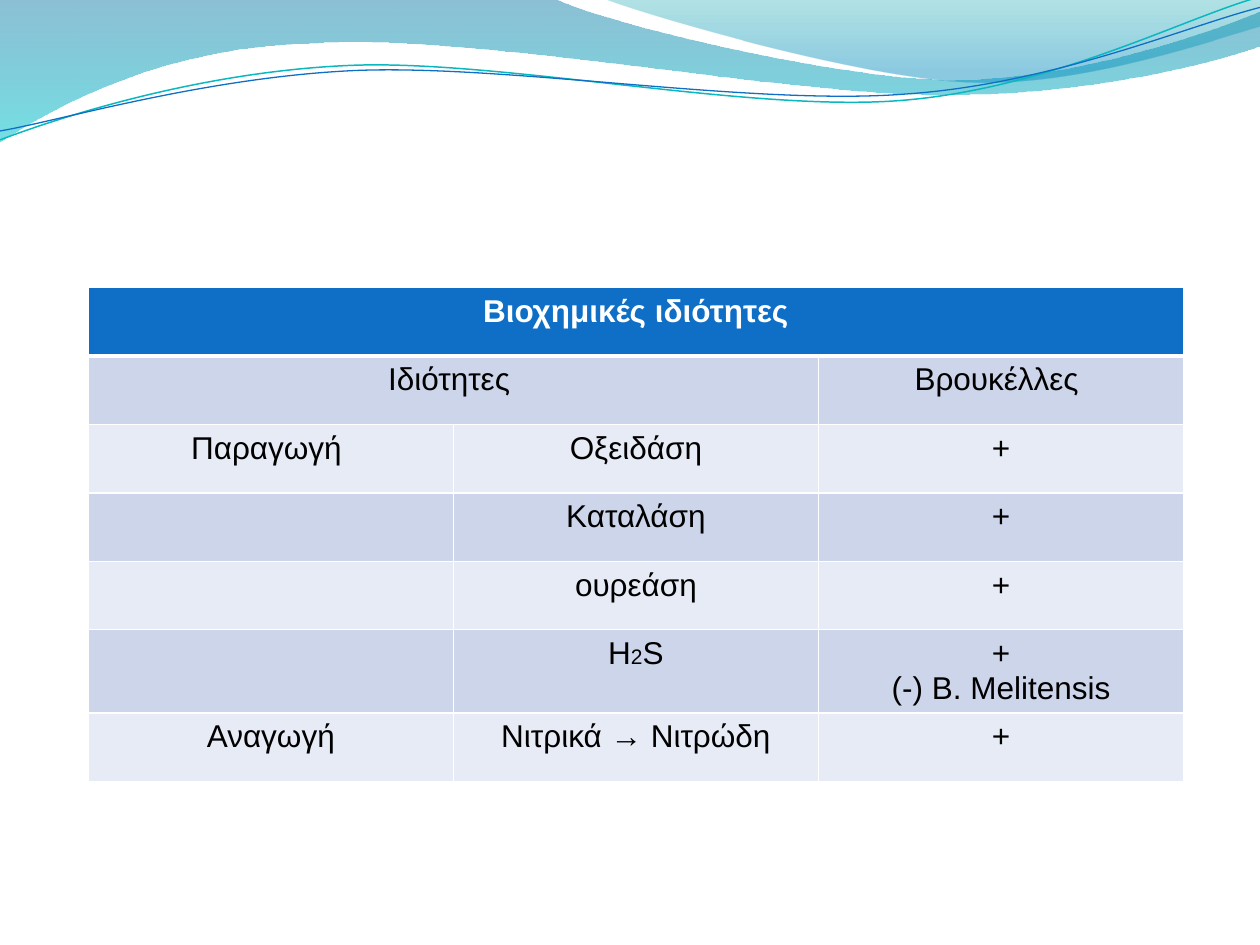
from dataclasses import dataclass
from math import cos, radians, sin

from lxml import etree
from pptx import Presentation
from pptx.dml.color import RGBColor
from pptx.enum.text import PP_ALIGN
from pptx.oxml.ns import qn
from pptx.util import Cm, Pt

CENTER = PP_ALIGN.CENTER
BLANK_LAYOUT = 6
RIBBON_TILT = 357.3
RIBBON_CENTER = (12.68, 1.48)


@dataclass(frozen=True)
class Theme:
    font: str = "Arial"
    body_size: float = 18
    subscript_size: float = 12
    header: str = "0F6FC6"
    bands: tuple = ("E7EBF5", "CCD5EA")
    light: str = "FFFFFF"
    dark: str = "000000"
    wave: tuple = ((0, "0074A1", 45), (1, "00C6CF", 55))
    crest: tuple = ((0, "00A1A9", 30), (0.8, "008BBF", 45))
    teal_ribbon: str = "0AB8BF"
    blue_ribbon: str = "0F6FC6"


WAVE = [
    [(0, 0)], [(11.18, -0.03)],
    [(12.09, 0.43), (16.87, 1.6), (19.25, 1.6)],
    [(21.67, 1.6), (24.33, 0.66), (25.4, 0.23)],
    [(25.43, 0.91)],
    [(24.97, 1.12), (22.1, 1.93), (18.95, 1.91)],
    [(15.8, 1.91), (9.7, 0.71), (6.53, 0.86)],
    [(3.28, 0.91), (1.17, 2.11), (-0.03, 2.87)],
    [(0, 0)],
]
CREST = [
    [(12.17, -0.03)],
    [(12.93, 0.28), (17.32, 1.57), (19.53, 1.65)],
    [(21.74, 1.75), (24.41, 0.81), (25.4, 0.53)],
    [(25.4, 0)], [(12.17, -0.03)],
]
TEAL_RIBBON = [
    [(0, 2.82)],
    [(1.22, 2.36), (4.01, 1.45), (7.04, 1.32)],
    [(10.03, 1.19), (15.06, 2.26), (18.11, 2.03)],
    [(21.16, 1.8), (23.83, 0.38), (25.35, -0.05)],
]
BLUE_RIBBON = [
    [(0, 2.64)],
    [(1.19, 2.44), (4.17, 1.55), (7.19, 1.42)],
    [(10.24, 1.3), (15.16, 2.13), (18.21, 1.9)],
    [(21.23, 1.7), (23.9, 0.53), (25.4, 0.15)],
]

PROPERTIES = [
    ["Βιοχημικές ιδιότητες", "", ""],
    ["Ιδιότητες ", "", "Βρουκέλλες "],
    ["Παραγωγή ", "Οξειδάση", "+"],
    ["", "Καταλάση", "+"],
    ["", "ουρεάση", "+"],
    ["", "Η|2|S", "+\n(-) B. Melitensis"],
    ["Αναγωγή", "Νιτρικά → Νιτρώδη", "+"],
]
MERGES = [(0, 0, 2), (1, 0, 1)]


def level(segments, tilt, center):
    angle = radians(-tilt)
    cx, cy = center
    return [[(cx + (x - cx) * cos(angle) - (y - cy) * sin(angle),
              cy + (x - cx) * sin(angle) + (y - cy) * cos(angle)) for x, y in segment]
            for segment in segments]


class SlideBuilder:
    def __init__(self, slide, theme):
        self.slide = slide
        self.theme = theme

    def outline(self, segments, close):
        start, *rest = [(Cm(x), Cm(y)) for segment in segments for x, y in segment]
        builder = self.slide.shapes.build_freeform(*start)
        builder.add_line_segments(rest, close=close)
        shape = builder.convert_to_shape()
        shape.shadow.inherit = False
        self.bend(shape, segments[1:])
        return shape

    def bend(self, shape, segments):
        lines = iter(list(shape._element.iter(qn("a:lnTo"))))
        for segment in segments:
            first, *others = [next(lines) for point in segment]
            if others:
                first.tag = qn("a:cubicBezTo")
            for line in others:
                first.append(line[0])
                line.getparent().remove(line)

    def wave(self, segments, stops):
        shape = self.outline(segments, True)
        shape.line.fill.background()
        shape.fill.gradient()
        shape.fill.gradient_angle = 270
        for stop, (position, color, opacity) in zip(shape.fill.gradient_stops, stops):
            stop.position = position
            stop.color.rgb = RGBColor.from_string(color)
        colors = shape._element.spPr.iter(qn("a:srgbClr"))
        for element, (position, color, opacity) in zip(colors, stops):
            etree.SubElement(element, qn("a:alpha"), val=str(opacity * 1000))

    def ribbon(self, segments, color, width):
        shape = self.outline(level(segments, RIBBON_TILT, RIBBON_CENTER), False)
        shape.rotation = RIBBON_TILT
        shape.fill.background()
        shape.line.color.rgb = RGBColor.from_string(color)
        shape.line.width = Pt(width)

    def borders(self, cell, widths):
        properties = cell._tc.get_or_add_tcPr()
        for side, width in zip("LRTB", widths):
            line = etree.SubElement(properties, qn(f"a:ln{side}"), w=str(Pt(width)))
            fill = etree.SubElement(line, qn("a:solidFill"))
            etree.SubElement(fill, qn("a:srgbClr"), val=self.theme.light)

    def cell_text(self, cell, text, color, bold):
        frame = cell.text_frame
        for index, line in enumerate(text.split("\n")):
            paragraph = frame.add_paragraph() if index else frame.paragraphs[0]
            paragraph.alignment = CENTER
            for part, piece in enumerate(line.split("|")):
                run = paragraph.add_run()
                run.text = piece
                run.font.name = self.theme.font
                run.font.size = Pt(self.theme.subscript_size if part % 2 else self.theme.body_size)
                run.font.bold = bold
                run.font.color.rgb = RGBColor.from_string(color)

    def table(self, rows, merges, left, top, column_width, row_height):
        theme = self.theme
        table = self.slide.shapes.add_table(
            len(rows), len(rows[0]), Cm(left), Cm(top),
            Cm(column_width * len(rows[0])), Cm(row_height * len(rows))).table
        for column in table.columns:
            column.width = Cm(column_width)
        for r, row in enumerate(rows):
            table.rows[r].height = Cm(row_height)
            header = r == 0
            for c, text in enumerate(row):
                cell = table.cell(r, c)
                self.borders(cell, (1, 1, 3 if r == 1 else 1, 3 if header else 1))
                cell.fill.solid()
                cell.fill.fore_color.rgb = RGBColor.from_string(
                    theme.header if header else theme.bands[r % 2])
                if text:
                    self.cell_text(cell, text, theme.light if header else theme.dark, header)
        for r, first, last in merges:
            table.cell(r, first).merge(table.cell(r, last))


def main():
    presentation = Presentation()
    presentation.slide_width = Cm(25.4)
    presentation.slide_height = Cm(19.05)
    theme = Theme()
    slide = presentation.slides.add_slide(presentation.slide_layouts[BLANK_LAYOUT])
    builder = SlideBuilder(slide, theme)
    builder.wave(WAVE, theme.wave)
    builder.wave(CREST, theme.crest)
    builder.ribbon(TEAL_RIBBON, theme.teal_ribbon, 0.85)
    builder.ribbon(BLUE_RIBBON, theme.blue_ribbon, 0.75)
    builder.table(PROPERTIES, MERGES, left=1.78, top=5.8, column_width=7.36, row_height=1.38)
    presentation.save("out.pptx")


if __name__ == "__main__":
    main()
